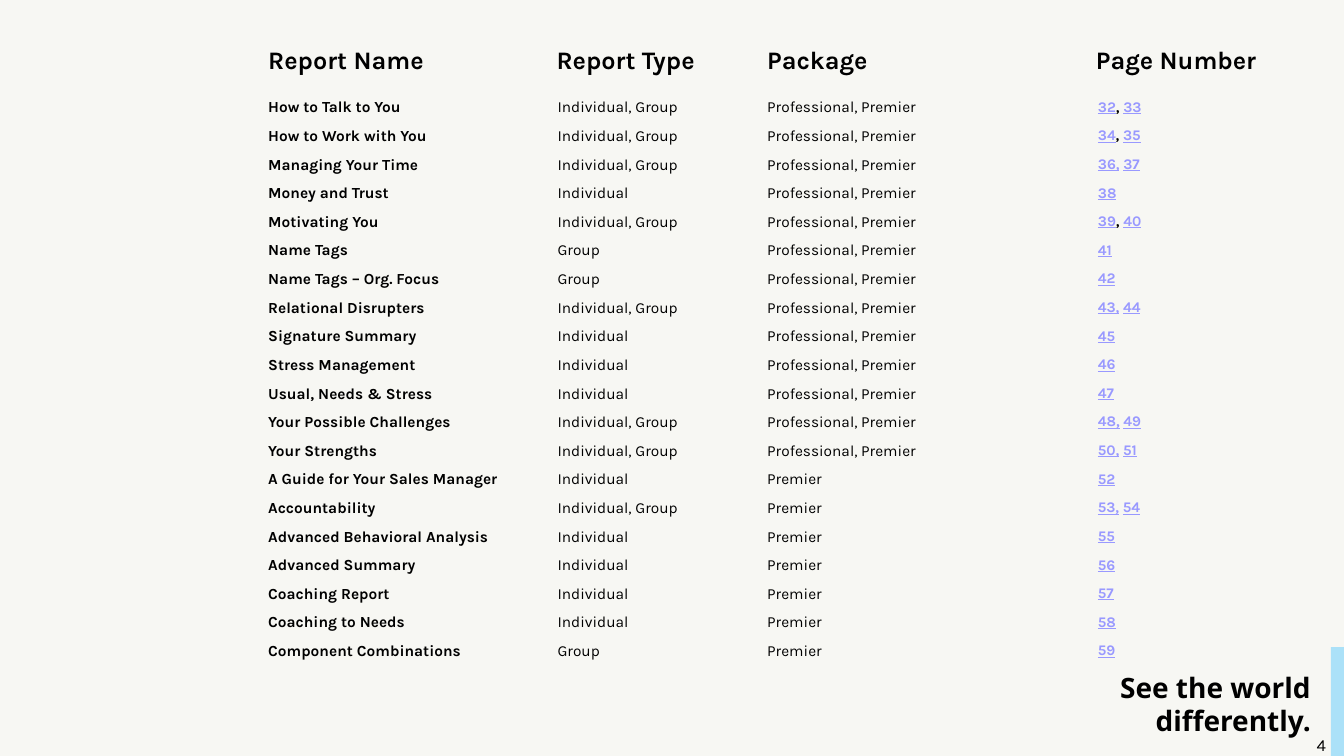
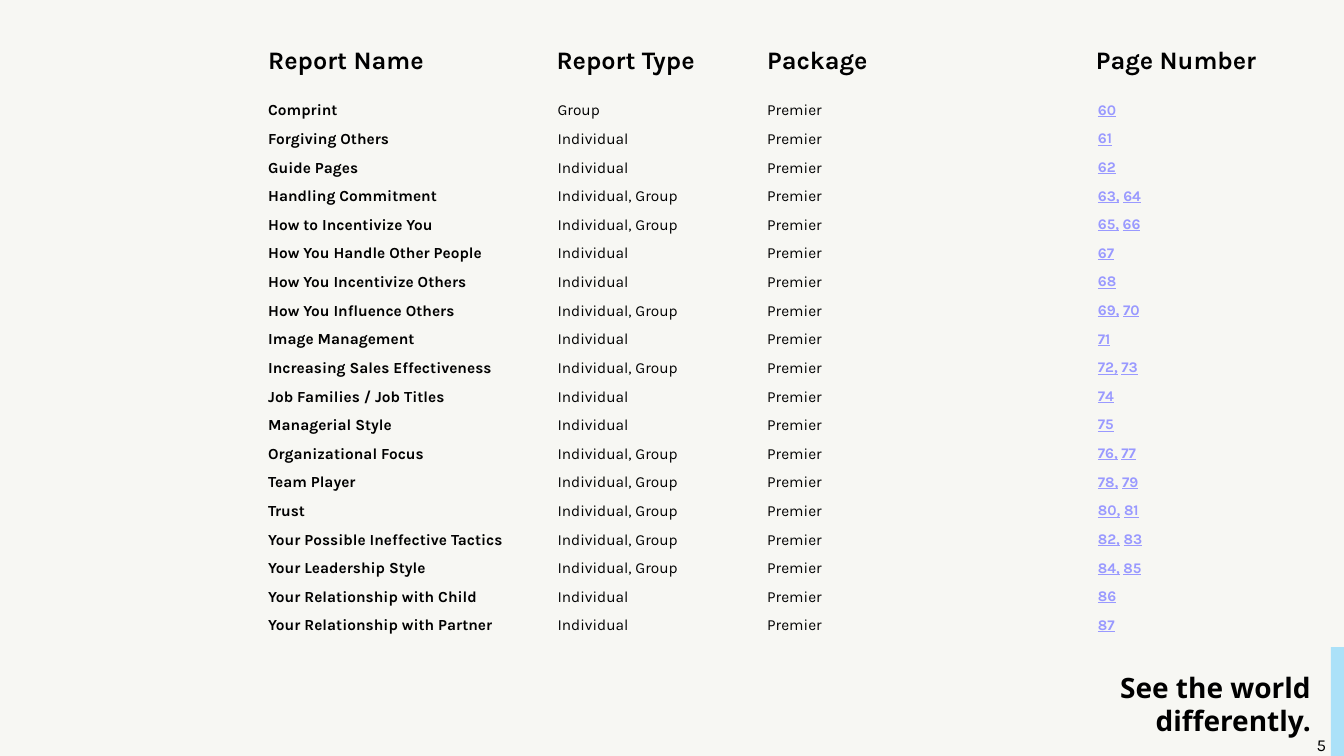
import pptx
import pptx.dml.color
import pptx.enum.shapes
import pptx.enum.text
import pptx.util
from pptx.util import Inches

BACKGROUND, ACCENT, INK, LINK = "F7F7F3", "ABE1F8", "000000", "9999FF"
BODY_FONT, TAGLINE_FONT = "Karla", "Noto Sans"
NO_STYLE_NO_GRID = "{2D5ABB26-0587-4C30-8999-92F81FD0307C}"

TABLE_LEFT = 2.56
HEADER_WIDTHS = [2.86, 2.09, 3.26, 2.25]
REPORT_WIDTHS = [2.87, 2.08, 3.28, 2.23]
HEADER_HEIGHT = 0.41
REPORT_HEIGHT = 5.67 / 20
HEADERS = ["Report Name", "Report Type", "Package", "Page Number"]

HEADER_TEXT = {"size": 18, "bold": True}
NAME_TEXT = {"size": 11, "bold": True}
DETAIL_TEXT = {"size": 11, "bold": False}
LINK_TEXT = {"size": 10.5, "bold": True, "underline": True, "color": LINK}
SEPARATOR_TEXT = {"size": 10.5, "bold": True}

ONE, TEAM, BOTH = "Individual", "Group", "Individual, Group"
PRO, TOP = "Professional, Premier", "Premier"

# In the page column, bars part the page links from the plain separators.
REPORTS_A = [
    ("How to Talk to You", BOTH, PRO, "32|, |33"),
    ("How to Work with You", BOTH, PRO, "34|, |35"),
    ("Managing Your Time", BOTH, PRO, "36,| |37"),
    ("Money and Trust", ONE, PRO, "38"),
    ("Motivating You", BOTH, PRO, "39|, |40"),
    ("Name Tags", TEAM, PRO, "41"),
    ("Name Tags – Org. Focus", TEAM, PRO, "42"),
    ("Relational Disrupters", BOTH, PRO, "43,| |44"),
    ("Signature Summary", ONE, PRO, "45"),
    ("Stress Management", ONE, PRO, "46"),
    ("Usual, Needs & Stress", ONE, PRO, "47"),
    ("Your Possible Challenges", BOTH, PRO, "48,| |49"),
    ("Your Strengths", BOTH, PRO, "50,| |51"),
    ("A Guide for Your Sales Manager", ONE, TOP, "52"),
    ("Accountability", BOTH, TOP, "53,| |54"),
    ("Advanced Behavioral Analysis", ONE, TOP, "55"),
    ("Advanced Summary", ONE, TOP, "56"),
    ("Coaching Report", ONE, TOP, "57"),
    ("Coaching to Needs", ONE, TOP, "58"),
    ("Component Combinations", TEAM, TOP, "59"),
]
REPORTS_B = [
    ("Comprint", TEAM, TOP, "60"),
    ("Forgiving Others", ONE, TOP, "61"),
    ("Guide Pages", ONE, TOP, "62"),
    ("Handling Commitment", BOTH, TOP, "63,| |64"),
    ("How to Incentivize You", BOTH, TOP, "65,| |66"),
    ("How You Handle Other People", ONE, TOP, "67"),
    ("How You Incentivize Others", ONE, TOP, "68"),
    ("How You Influence Others", BOTH, TOP, "69,| |70"),
    ("Image Management", ONE, TOP, "71"),
    ("Increasing Sales Effectiveness", BOTH, TOP, "72,| |73"),
    ("Job Families / Job Titles", ONE, TOP, "74"),
    ("Managerial Style", ONE, TOP, "75"),
    ("Organizational Focus", BOTH, TOP, "76,| |77"),
    ("Team Player", BOTH, TOP, "78,| |79"),
    ("Trust", BOTH, TOP, "80,| |81"),
    ("Your Possible Ineffective Tactics", BOTH, TOP, "82,| |83"),
    ("Your Leadership Style", BOTH, TOP, "84,| |85"),
    ("Your Relationship with Child", ONE, TOP, "86"),
    ("Your Relationship with Partner", ONE, TOP, "87"),
]


def set_color(color_format, value):
    color_format.rgb = pptx.dml.color.RGBColor.from_string(value)


def set_fill(fill, value):
    fill.solid()
    set_color(fill.fore_color, value)


def add_run(p, text, size, color=INK, name=BODY_FONT, **formats):
    r = p.add_run()
    r.text = text
    set_color(r.font.color, color)
    formats.update(size=pptx.util.Pt(size), name=name)
    for key, value in formats.items():
        setattr(r.font, key, value)


def add_textbox(s, left, top, width, height, text, **formats):
    sp = s.shapes.add_textbox(*map(Inches, (left, top, width, height)))
    sp.text_frame.word_wrap = True
    add_run(sp.text_frame.paragraphs[0], text, **formats)
    return sp


def add_table(s, top, widths, row_height, rows):
    """Add an unstyled table; every cell is a list of (text, format) runs."""
    frame = s.shapes.add_table(
        len(rows), len(widths), Inches(TABLE_LEFT), Inches(top),
        Inches(sum(widths)), Inches(row_height * len(rows)))
    table = frame.table
    table.first_row = table.horz_banding = False
    table._tbl.tblPr[0].text = NO_STYLE_NO_GRID
    for column, width in zip(table.columns, widths):
        column.width = Inches(width)
    for row, contents in zip(table.rows, rows):
        row.height = Inches(row_height)
        for cell, runs in zip(row.cells, contents):
            cell.fill.background()
            for text, formats in runs:
                add_run(cell.text_frame.paragraphs[0], text, **formats)


def report_row(name, kind, package, pages):
    page_runs = [(part, SEPARATOR_TEXT if i % 2 else LINK_TEXT)
                 for i, part in enumerate(pages.split("|"))]
    return [[(name, NAME_TEXT)], [(kind, DETAIL_TEXT)],
            [(package, DETAIL_TEXT)], page_runs]


def add_branding(s):
    """Draw the tagline and accent bar, then move them to the slide's layout."""
    tagline = add_textbox(s, 10.79, 6.6, 2.31, 0.77, "See the world differently.",
                          size=20, name=TAGLINE_FONT, bold=True)
    p = tagline.text_frame.paragraphs[0]
    p.alignment = pptx.enum.text.PP_ALIGN.RIGHT
    p.line_spacing = pptx.util.Pt(24)
    bar = s.shapes.add_shape(pptx.enum.shapes.MSO_SHAPE.RECTANGLE,
                             *map(Inches, (13.2, 6.42, 0.14, 1.08)))
    bar.shadow.inherit = False
    set_fill(bar.fill, ACCENT)
    bar.line.fill.background()
    for sp in (tagline, bar):
        s.slide_layout.shapes.element.append(sp.element)


def add_report_slide(prs, layout, number, top, reports):
    s = prs.slides.add_slide(layout)
    add_table(s, 0.41, HEADER_WIDTHS, HEADER_HEIGHT,
              [[[(text, HEADER_TEXT)] for text in HEADERS]])
    add_table(s, top, REPORT_WIDTHS, REPORT_HEIGHT,
              [report_row(*report) for report in reports])
    add_textbox(s, 12.96, 7.24, 0.35, 0.3, str(number), size=12)
    return s


def main():
    prs = pptx.Presentation()
    prs.slide_width, prs.slide_height = Inches(13.33), Inches(7.5)
    set_fill(prs.slide_master.background.fill, BACKGROUND)
    layout = prs.slide_layouts[6]
    s = add_report_slide(prs, layout, 4, 0.93, REPORTS_A)
    add_branding(s)
    add_report_slide(prs, layout, 5, 0.96, REPORTS_B)
    prs.save("out.pptx")


if __name__ == "__main__":
    main()
